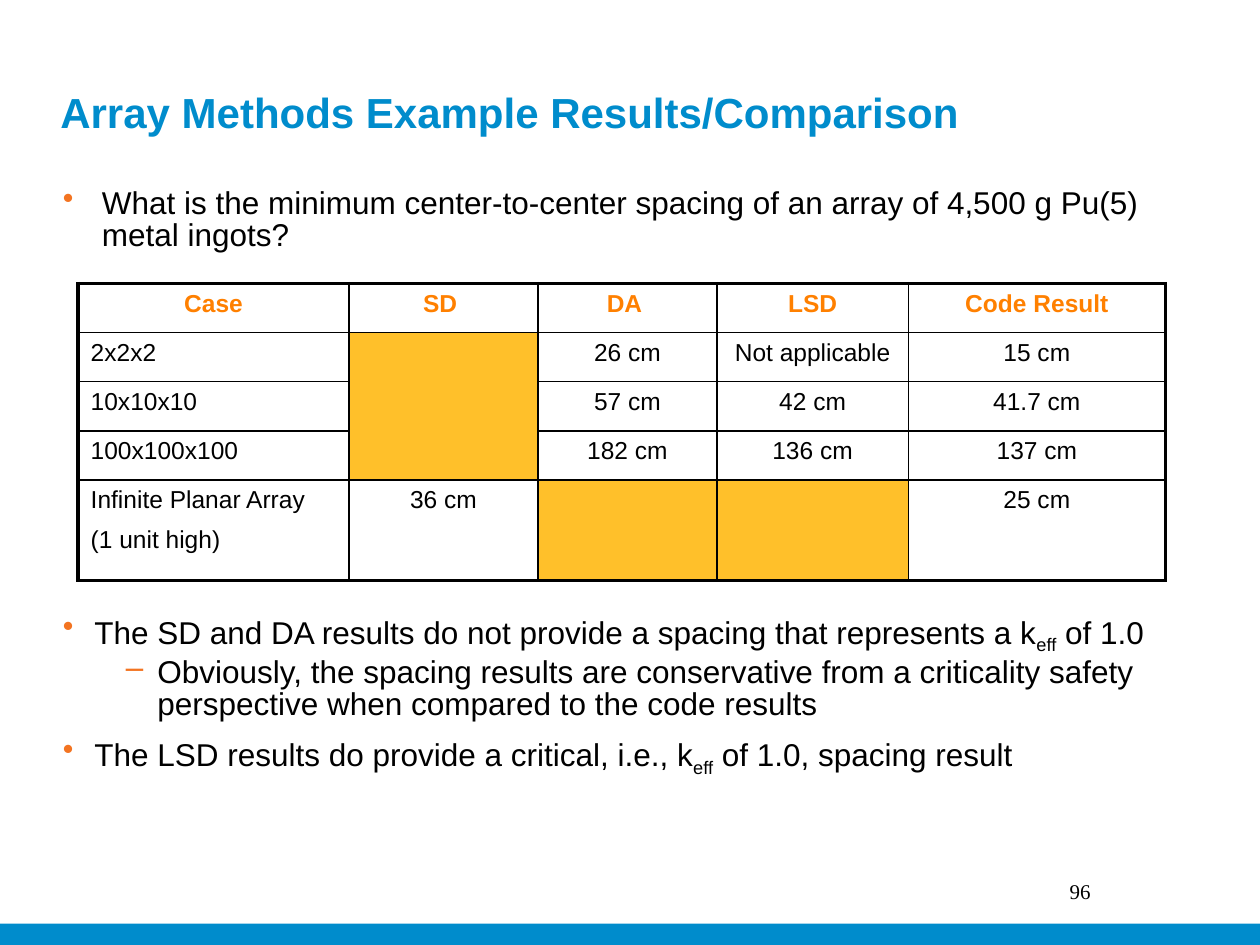
"""Build the slide comparing array method results."""
from dataclasses import dataclass

from lxml.etree import SubElement as Sub
from pptx import Presentation
from pptx.dml.color import RGBColor as RGB
from pptx.enum.shapes import MSO_SHAPE as Kind
from pptx.enum.text import MSO_ANCHOR as Anchor, PP_ALIGN as Align
from pptx.oxml.ns import qn
from pptx.util import Inches, Pt


@dataclass(frozen=True)
class Theme:
    blue: str = "008CCC"
    mark: str = "F37421"
    head: str = "FF8000"
    gold: str = "FFC02A"
    ink: str = "000000"
    sans: str = "Arial"
    serif: str = "Times New Roman"
    title: int = 24
    body: int = 18
    cell: int = 14
    page: int = 12
    thick: float = 2.25
    thin: float = 1


T = Theme()
WIDE, HIGH = 10, 7.5
TITLE = "Array Methods Example Results/Comparison"
PAGE = "96"
ASK = [
    ("•", 0.31, 0.31, 0, ["What is the minimum center-to-center spacing of an array "
                          "of 4,500 g Pu(5) metal ingots?"]),
]
NOTES = [
    ("•", 0.25, 0.25, 0, ["The SD and DA results do not provide a spacing that "
                          "represents a k", "eff", " of 1.0"]),
    ("–", 0.75, 0.25, 3.6, ["Obviously, the spacing results are conservative from a "
                            "criticality safety perspective when compared to the "
                            "code results"]),
    ("•", 0.25, 0.25, 9, ["The LSD results do provide a critical, i.e., k", "eff",
                          " of 1.0, spacing result"]),
]
ROWS = [
    ["Case", "SD ", "DA ", "LSD", "Code Result"],
    ["2x2x2", None, "26 cm", "Not applicable", "15 cm"],
    ["10x10x10", None, "57 cm", "42 cm", "41.7 cm"],
    ["100x100x100", None, "182 cm", "136 cm", "137 cm"],
    ["Infinite Planar Array\n(1 unit high)", "36 cm", None, None, "25 cm"],
]
COLS = [2.15, 1.5, 1.42, 1.52, 2.04]
TALL = [0.39] * 4 + [0.8]


def style(para, size, color=T.ink, face=T.sans, bold=False):
    font = para.font
    font.size, font.name, font.bold = Pt(size), face, bold
    font.color.rgb = RGB.from_string(color)


def text_box(slide, area, pads=(0.1, 0.05, 0.1, 0.05)):
    frame = slide.shapes.add_textbox(*map(Inches, area)).text_frame
    frame.word_wrap = True
    (frame.margin_left, frame.margin_top,
     frame.margin_right, frame.margin_bottom) = map(Inches, pads)
    return frame


def bullet(para, sign, left, hang):
    props = para._p.get_or_add_pPr()
    props.set("marL", str(Inches(left)))
    props.set("indent", str(-Inches(hang)))
    Sub(Sub(props, qn("a:buClr")), qn("a:srgbClr")).set("val", T.mark)
    Sub(props, qn("a:buChar")).set("char", sign)


def add_list(slide, area, items):
    frame = text_box(slide, area, (0, 0, 0, 0))
    for i, (sign, left, hang, gap, parts) in enumerate(items):
        para = frame.add_paragraph() if i else frame.paragraphs[0]
        bullet(para, sign, left, hang)
        para.line_spacing, para.space_before = 0.85, Pt(gap)
        style(para, T.body)
        for part in parts:
            run = para.add_run()
            run.text = part
            if part == "eff":
                run.font._element.set("baseline", "-25000")


def add_line(slide, area, text, size, color, face, bold=False, low=False):
    frame = text_box(slide, area, (0.1, 0.05, 0.1, 0 if low else 0.05))
    frame.vertical_anchor = Anchor.BOTTOM if low else Anchor.TOP
    frame.text = text
    style(frame.paragraphs[0], size, color, face, bold)


def border(cell, edges):
    props = cell._tc.get_or_add_tcPr()
    for side, outer in edges.items():
        line = Sub(props, qn(f"a:ln{side}"))
        line.set("w", str(Pt(T.thick if outer else T.thin)))
        Sub(Sub(line, qn("a:solidFill")), qn("a:srgbClr")).set("val", T.ink)


def add_grid(slide, left, top):
    area = map(Inches, (left, top, sum(COLS), sum(TALL)))
    table = slide.shapes.add_table(len(ROWS), len(COLS), *area).table
    table.first_row = table.horz_banding = False
    for col, width in zip(table.columns, COLS):
        col.width = Inches(width)
    for row, height in zip(table.rows, TALL):
        row.height = Inches(height)
    for r, row in enumerate(ROWS):
        for c, text in enumerate(row):
            cell = table.cell(r, c)
            border(cell, {"L": c == 0, "R": c == len(COLS) - 1,
                          "T": r == 0, "B": r == len(ROWS) - 1})
            if text is None:
                cell.fill.solid()
                cell.fill.fore_color.rgb = RGB.from_string(T.gold)
            else:
                cell.fill.background()
                cell.text = text
            for i, para in enumerate(cell.text_frame.paragraphs):
                para.alignment = Align.LEFT if r and not c else Align.CENTER
                para.space_before = Pt(i * T.cell / 2)
                style(para, T.cell, T.ink if r else T.head, bold=not r)
    table.cell(1, 1).merge(table.cell(3, 1))


def main():
    deck = Presentation()
    deck.slide_width, deck.slide_height = Inches(WIDE), Inches(HIGH)
    slide = deck.slides.add_slide(deck.slide_layouts[6])
    band = slide.shapes.add_shape(
        Kind.RECTANGLE, *map(Inches, (0, HIGH - 0.17, WIDE, 0.17)))
    band.shadow.inherit = False
    band.fill.solid()
    band.fill.fore_color.rgb = RGB.from_string(T.blue)
    band.line.fill.background()
    add_list(slide, (0.5, 1.5, 9, 0.6), ASK)
    add_list(slide, (0.5, 4.88, 9, 1.4), NOTES)
    add_line(slide, (0.38, 0.68, 9.12, 0.41), TITLE, T.title, T.blue, T.sans, True, True)
    add_grid(slide, 0.62, 2.25)
    add_line(slide, (8.39, 6.92, 1.11, 0.5), PAGE, T.page, T.ink, T.serif)
    deck.save("out.pptx")


if __name__ == "__main__":
    main()
